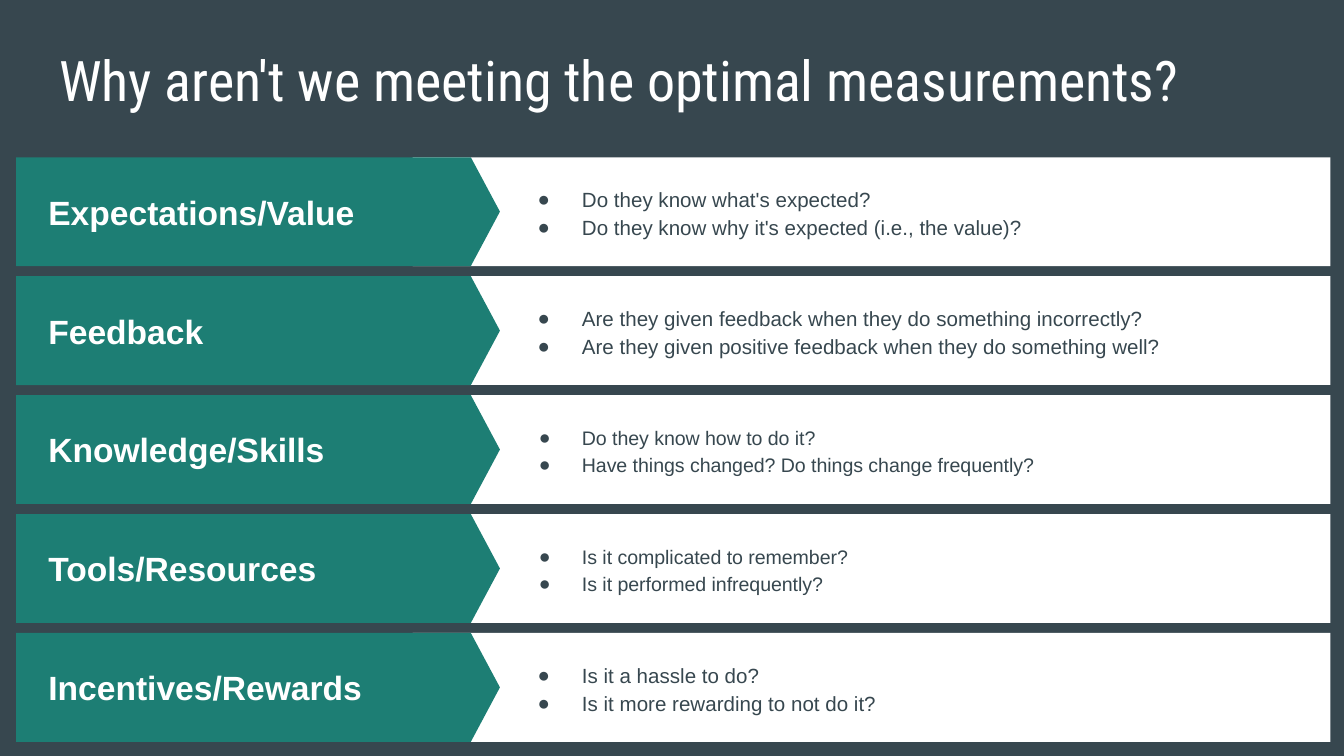
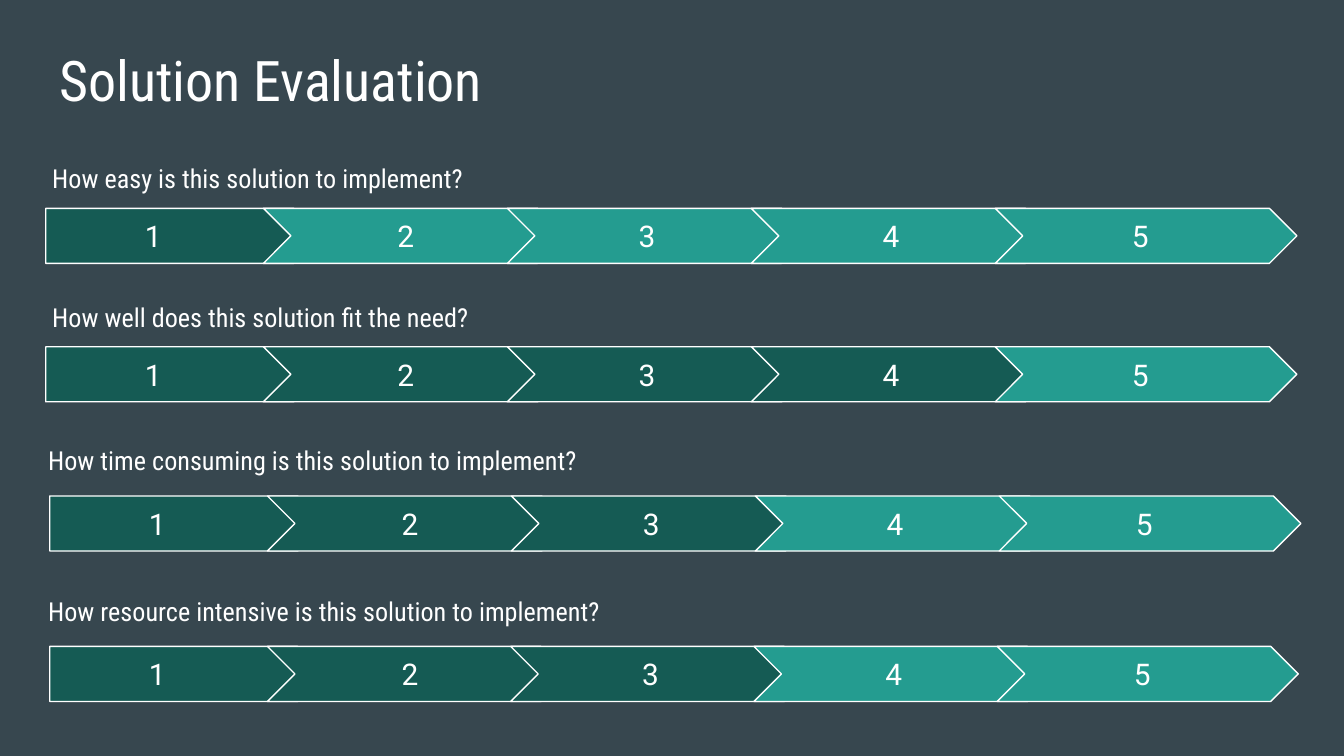
from copy import deepcopy

from lxml import etree
from pptx import Presentation
from pptx import util as u
from pptx.dml.color import RGBColor
from pptx.enum import shapes, text
from pptx.oxml.ns import qn

# Content
QUESTIONS_TITLE = "Why aren't we meeting the optimal measurements?"
CAUSES = [  # heading, bullet size, questions
    ("Expectations/Value", 11, [
        "Do they know what's expected?",
        "Do they know why it's expected (i.e., the value)?"]),
    ("Feedback", 11, [
        "Are they given feedback when they do something incorrectly?",
        "Are they given positive feedback when they do something well?"]),
    ("Knowledge/Skills", 10.5, [
        "Do they know how to do it?",
        "Have things changed? Do things change frequently?"]),
    ("Tools/Resources", 10.5, [
        "Is it complicated to remember?",
        "Is it performed infrequently?"]),
    ("Incentives/Rewards", 11, [
        "Is it a hassle to do?",
        "Is it more rewarding to not do it?"]),
]
EVALUATION_TITLE = "Solution Evaluation"
RATINGS = [  # question, its left and top, bar left and top, step width, score
    ("How easy is this solution to implement?", 0.29, 1.11, 0.34, 1.55, 1.815, 1),
    ("How well does this solution fit the need?", 0.29, 2.14, 0.34, 2.58, 1.815, 4),
    ("How time consuming is this solution to implement?", 0.26, 3.21, 0.37, 3.69, 1.815, 3),
    ("How resource intensive is this solution to implement?", 0.26, 4.33, 0.37, 4.81, 1.81, 3),
]

# Colours and fonts
SLATE = RGBColor(0x37, 0x47, 0x4F)
WHITE = RGBColor(0xFF, 0xFF, 0xFF)
GREEN = RGBColor(0x1D, 0x7E, 0x74)
SCORED = RGBColor(0x15, 0x5B, 0x54)
UNSCORED = RGBColor(0x24, 0x9C, 0x90)
HEADING_FONT, NUMBER_FONT, BODY_FONT = "Roboto Condensed", "Roboto", "Arial"

# Grid, in inches
BAND_TOP, BAND_PITCH, BAND_HEIGHT = 1.17, 0.885, 0.81
BAR_HEIGHT, FIRST_STEP, STEP_OVERLAP = 0.41, 1.62, 0.43
NUMBER_SHIFTS = (0, 0.34, 0.32, 0.32, 0.36)


def place(shape, left, top, width, height):
    shape.left, shape.top = u.Inches(left), u.Inches(top)
    shape.width, shape.height = u.Inches(width), u.Inches(height)


def add_bullet(para, color, indent):
    properties = para._p.get_or_add_pPr()
    properties.set("marL", str(u.Inches(0.5)))
    properties.set("indent", str(-u.Inches(indent)))
    bullet_color = etree.SubElement(properties, qn("a:buClr"))
    etree.SubElement(bullet_color, qn("a:srgbClr"), val=str(color))
    etree.SubElement(properties, qn("a:buFont"), typeface=BODY_FONT)
    etree.SubElement(properties, qn("a:buChar"), char="●")


def remove_bullet(para):
    properties = para._p.get_or_add_pPr()
    properties.set("marL", "0")
    properties.set("indent", "0")
    etree.SubElement(properties, qn("a:buNone"))


def write(box, lines, *, size, font, color=WHITE, bold=False, align=text.PP_ALIGN.LEFT,
          anchor=text.MSO_ANCHOR.TOP, spacing=1.0, bullet_indent=None):
    frame = box.text_frame
    frame.word_wrap = True
    frame.auto_size = text.MSO_AUTO_SIZE.NONE
    frame.vertical_anchor = anchor
    frame.margin_left = frame.margin_right = u.Inches(0.1)
    frame.margin_top = frame.margin_bottom = u.Inches(0.1)
    for index, line in enumerate(lines):
        para = frame.add_paragraph() if index else frame.paragraphs[0]
        para.alignment, para.line_spacing = align, spacing
        para.space_before = para.space_after = u.Pt(0)
        if bullet_indent:
            add_bullet(para, color, bullet_indent)
        else:
            remove_bullet(para)
        span = para.add_run()
        span.text = line
        span.font.name, span.font.size = font, u.Pt(size)
        span.font.bold, span.font.color.rgb = bold, color


def add_panel(page, preset, at, fill, outline=None, point=None):
    panel = page.shapes.add_shape(preset, *map(u.Inches, at))
    panel.shadow.inherit = False
    panel.fill.solid()
    panel.fill.fore_color.rgb = fill
    if outline is None:
        panel.line.fill.background()
    else:
        panel.line.color.rgb, panel.line.width = outline, u.Pt(0.75)
    if point is not None:
        panel.adjustments[0] = point


def add_label(page, label, at, **style):
    box = page.shapes.add_textbox(*map(u.Inches, at))
    write(box, [label], **style)


def add_page(deck, layout, title):
    page = deck.slides.add_slide(layout)
    place(page.shapes.title, 0.34, 0.24, 9.32, 0.63)
    write(page.shapes.title, [title], size=30, font=HEADING_FONT)
    return page


def extend_layout(layout, count):
    """Give a two-body layout as many body placeholders as the page needs."""
    body = layout.placeholders[1]._element
    for number in range(20, 18 + count):
        extra = deepcopy(body)
        label = extra.xpath(".//p:cNvPr")[0]
        label.set("id", str(number))
        label.set("name", f"Content Placeholder {number}")
        extra.xpath(".//p:ph")[0].set("idx", str(number))
        body.getparent().append(extra)
    return layout


def build_causes(deck):
    layout = extend_layout(deck.slide_layouts[3], 2 * len(CAUSES))
    page = add_page(deck, layout, QUESTIONS_TITLE)
    bodies = list(page.placeholders)[1:]
    for row, (heading, size, questions) in enumerate(CAUSES):
        top = BAND_TOP + row * BAND_PITCH
        add_panel(page, shapes.MSO_SHAPE.RECTANGLE, (3.07, top, 6.83, BAND_HEIGHT), WHITE)
        add_panel(page, shapes.MSO_SHAPE.PENTAGON, (0.12, top, 3.6, BAND_HEIGHT), GREEN,
                  point=0.267)
        name_box, list_box = bodies[2 * row:2 * row + 2]
        place(name_box, 0.26, top, 2.86, BAND_HEIGHT)
        place(list_box, 3.73, top, 6.03, BAND_HEIGHT)
        write(name_box, [heading], size=18, font=BODY_FONT, bold=True,
              anchor=text.MSO_ANCHOR.MIDDLE)
        write(list_box, questions, size=size, font=BODY_FONT, color=SLATE, spacing=1.15,
              anchor=text.MSO_ANCHOR.MIDDLE, bullet_indent=0.33 if size == 11 else 0.32)
        # Text goes in front of its band
        for box in (name_box, list_box):
            page.shapes._spTree.append(box._element)


def build_evaluation(deck):
    page = add_page(deck, deck.slide_layouts[5], EVALUATION_TITLE)
    for question, left, top, bar_left, bar_top, step, score in RATINGS:
        add_label(page, question, (left, top, 4.86, 0.26), size=14, font=HEADING_FONT)
        for index, shift in enumerate(NUMBER_SHIFTS):
            if index:
                preset, width, number_width = shapes.MSO_SHAPE.CHEVRON, step + STEP_OVERLAP, 1.44
                step_left = bar_left + FIRST_STEP + (index - 1) * step
            else:
                preset, width, number_width = shapes.MSO_SHAPE.PENTAGON, 2.05, 1.6
                step_left = bar_left
            add_panel(page, preset, (step_left, bar_top, width, BAR_HEIGHT),
                      SCORED if index < score else UNSCORED, outline=WHITE, point=0.5)
            add_label(page, str(index + 1),
                      (step_left + shift, bar_top + 0.075, number_width, 0.26),
                      size=16, font=NUMBER_FONT, align=text.PP_ALIGN.CENTER,
                      anchor=text.MSO_ANCHOR.MIDDLE)


def main():
    deck = Presentation()
    deck.slide_width = u.Inches(10)
    deck.slide_height = deck.slide_width * 9 // 16
    backdrop = deck.slide_master.background.fill
    backdrop.solid()
    backdrop.fore_color.rgb = SLATE
    build_causes(deck)
    build_evaluation(deck)
    deck.save("out.pptx")


if __name__ == "__main__":
    main()
